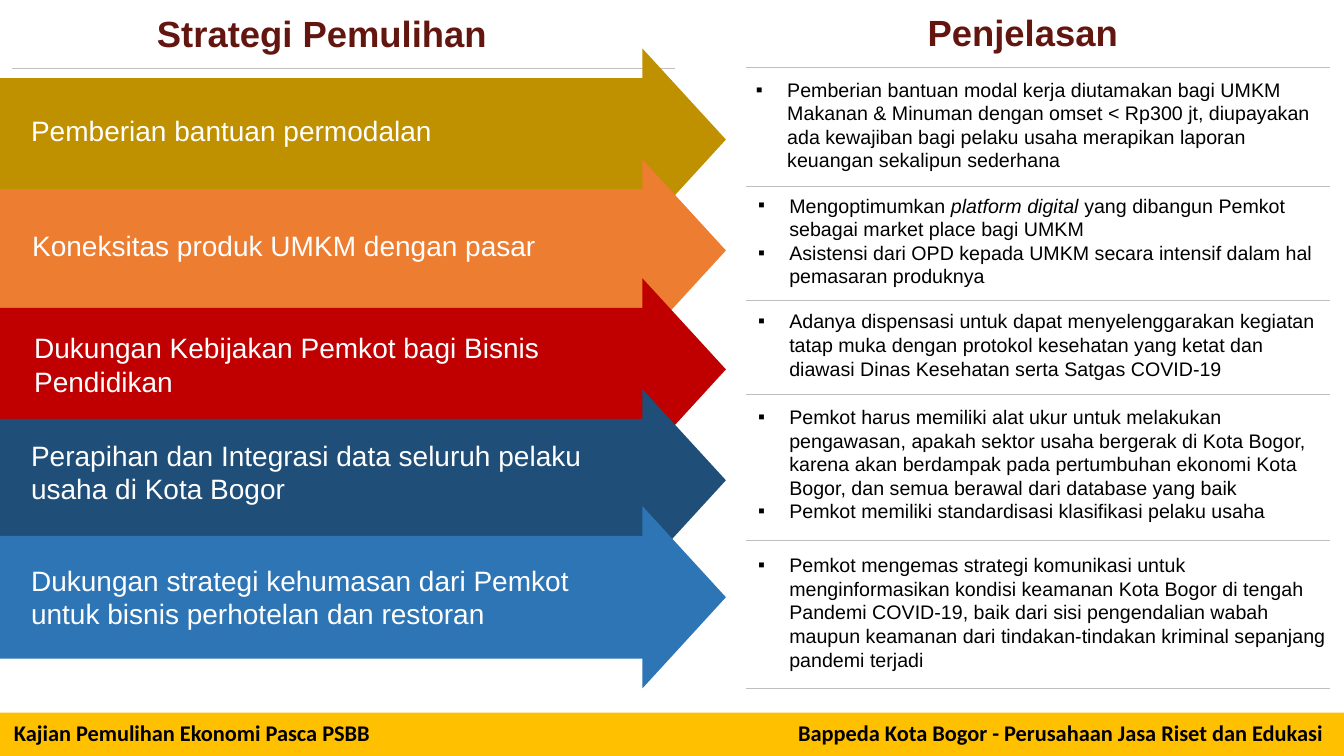
from lxml import etree
from pptx import Presentation
from pptx.dml.color import RGBColor
from pptx.enum.shapes import MSO_CONNECTOR, MSO_SHAPE
from pptx.enum.text import MSO_ANCHOR, MSO_AUTO_SIZE, PP_ALIGN
from pptx.oxml.ns import qn
from pptx.util import Inches, Pt

COLORS = {
    "gold": "BF9000", "orange": "ED7D31", "red": "C00000", "navy": "1F4E79",
    "blue": "2E75B6", "amber": "FFC000", "rule": "BFBFBF",
    "heading": "631610", "black": "000000", "white": "FFFFFF",
}
HEADINGS = ("Strategi Pemulihan", "Penjelasan")
FOOTERS = (
    "Kajian Pemulihan Ekonomi Pasca PSBB",
    "Bappeda Kota Bogor - Perusahaan Jasa Riset dan Edukasi",
)
# Asterisks enclose italic words.
STRATEGIES = [
    ("Pemberian bantuan permodalan", "gold", [
        "Pemberian bantuan modal kerja diutamakan bagi UMKM Makanan & Minuman dengan "
        "omset < Rp300 jt, diupayakan ada kewajiban bagi pelaku usaha merapikan "
        "laporan keuangan sekalipun sederhana"]),
    ("Koneksitas produk UMKM dengan pasar", "orange", [
        "Mengoptimumkan *platform digital* yang dibangun Pemkot sebagai market place "
        "bagi UMKM",
        "Asistensi dari OPD kepada UMKM secara intensif dalam hal pemasaran produknya"]),
    ("Dukungan Kebijakan Pemkot bagi Bisnis Pendidikan", "red", [
        "Adanya dispensasi untuk dapat menyelenggarakan kegiatan tatap muka dengan "
        "protokol kesehatan yang ketat dan diawasi Dinas Kesehatan serta Satgas COVID-19"]),
    ("Perapihan dan Integrasi data seluruh pelaku usaha di Kota Bogor", "navy", [
        "Pemkot harus memiliki alat ukur untuk melakukan pengawasan, apakah sektor usaha "
        "bergerak di Kota Bogor, karena akan berdampak pada pertumbuhan ekonomi Kota "
        "Bogor, dan semua berawal dari database yang baik",
        "Pemkot memiliki standardisasi klasifikasi pelaku usaha"]),
    ("Dukungan strategi kehumasan dari Pemkot untuk bisnis perhotelan dan restoran", "blue", [
        "Pemkot mengemas strategi komunikasi untuk menginformasikan kondisi keamanan Kota "
        "Bogor di tengah Pandemi COVID-19, baik dari sisi pengendalian wabah maupun "
        "keamanan dari tindakan-tindakan kriminal sepanjang pandemi terjadi"]),
]
# Row positions in inches: arrow top, label (left, top, height), detail (left, top, width, height)
ROWS = [
    (0.48, (0.21, 1.08, 0.44), (7.4, 0.72, 5.93, 1.04)),
    (1.58, (0.22, 2.22, 0.44), (7.42, 1.87, 5.93, 1.04)),
    (2.76, (0.24, 3.23, 0.77), (7.42, 3.02, 5.85, 0.81)),
    (3.86, (0.21, 4.3, 0.77), (7.42, 3.97, 5.85, 1.28)),
    (5.02, (0.21, 5.54, 0.77), (7.42, 5.44, 5.85, 1.28)),
]
RULE_TOPS = (0.67, 1.85, 2.98, 3.91, 5.36, 6.83)
ARROW_SIZE = (7.2, 1.81)
LABEL_WIDTH = 6.16
BULLET_INDENT = 0.31

HEADING = {"size": Pt(26), "name": "Arial", "bold": True, "color": "heading"}
LABEL = {"size": Pt(20), "name": "Arial", "bold": False, "color": "white"}
DETAIL = {"size": Pt(14), "name": "Arial", "bold": False, "color": "black"}
FOOTER = {"size": Pt(16), "name": "Calibri", "bold": True, "color": "black"}


def rgb(name):
    return RGBColor.from_string(COLORS[name])


def style_font(font, style):
    for attribute, value in style.items():
        if attribute == "color":
            font.color.rgb = rgb(value)
        else:
            setattr(font, attribute, value)


def add_bullet(paragraph):
    properties = paragraph._p.get_or_add_pPr()
    properties.set("marL", str(Inches(BULLET_INDENT)))
    properties.set("indent", str(-Inches(BULLET_INDENT)))
    etree.SubElement(properties, qn("a:buFont")).set("typeface", "Arial")
    etree.SubElement(properties, qn("a:buChar")).set("char", "▪")


def write(shape, paragraphs, style, align=PP_ALIGN.LEFT, anchor=MSO_ANCHOR.TOP,
          fit=MSO_AUTO_SIZE.SHAPE_TO_FIT_TEXT, bullets=False):
    frame = shape.text_frame
    frame.word_wrap, frame.auto_size, frame.vertical_anchor = True, fit, anchor
    for number, text in enumerate(paragraphs):
        paragraph = frame.add_paragraph() if number else frame.paragraphs[0]
        paragraph.alignment = align
        if bullets:
            add_bullet(paragraph)
        for part, words in enumerate(text.split("*")):
            run = paragraph.add_run()
            run.text = words
            style_font(run.font, style)
            run.font.italic = part % 2 == 1


def add_box(slide, at, paragraphs, style, **options):
    box = slide.shapes.add_textbox(*map(Inches, at))
    write(box, paragraphs, style, **options)


def add_block(slide, preset, at, color):
    block = slide.shapes.add_shape(preset, *map(Inches, at))
    block.shadow.inherit = False
    block.fill.solid()
    block.fill.fore_color.rgb = rgb(color)
    block.line.fill.background()
    return block


def add_rule(slide, left, right, top):
    rule = slide.shapes.add_connector(
        MSO_CONNECTOR.STRAIGHT, *map(Inches, (left, top, right, top)))
    rule.line.color.rgb = rgb("rule")
    rule.line.width = Pt(0.5)
    etree.SubElement(rule._element.spPr, qn("a:effectLst"))


def main():
    deck = Presentation()
    deck.slide_width, deck.slide_height = Inches(13.33), Inches(7.5)
    slide = deck.slides.add_slide(deck.slide_layouts[5])
    centered = {"align": PP_ALIGN.CENTER, "anchor": MSO_ANCHOR.MIDDLE,
                "fit": MSO_AUTO_SIZE.NONE}

    title = slide.shapes.title
    title.left, title.top, title.width, title.height = map(Inches, (0, -0.03, 6.39, 0.71))
    write(title, HEADINGS[:1], HEADING, **centered)
    add_box(slide, (6.95, -0.04, 6.39, 0.71), HEADINGS[1:], HEADING, **centered)

    add_rule(slide, 0.12, 6.69, 0.68)
    for top in RULE_TOPS:
        add_rule(slide, 7.4, 13.19, top)

    for (label, color, details), (arrow_top, label_at, detail_at) in zip(STRATEGIES, ROWS):
        arrow = add_block(slide, MSO_SHAPE.RIGHT_ARROW, (0, arrow_top, *ARROW_SIZE), color)
        arrow.adjustments[0], arrow.adjustments[1] = 0.673, 0.458
        left, top, height = label_at
        add_box(slide, (left, top, LABEL_WIDTH, height), [label], LABEL)
        add_box(slide, detail_at, details, DETAIL, bullets=True)

    add_block(slide, MSO_SHAPE.RECTANGLE, (-0.02, 7.07, 13.38, 0.43), "amber")
    add_box(slide, (0.04, 7.09, 4.5, 0.37), FOOTERS[:1], FOOTER)
    add_box(slide, (7.16, 7.09, 6.06, 0.37), FOOTERS[1:], FOOTER, align=PP_ALIGN.RIGHT)
    deck.save("out.pptx")


if __name__ == "__main__":
    main()
